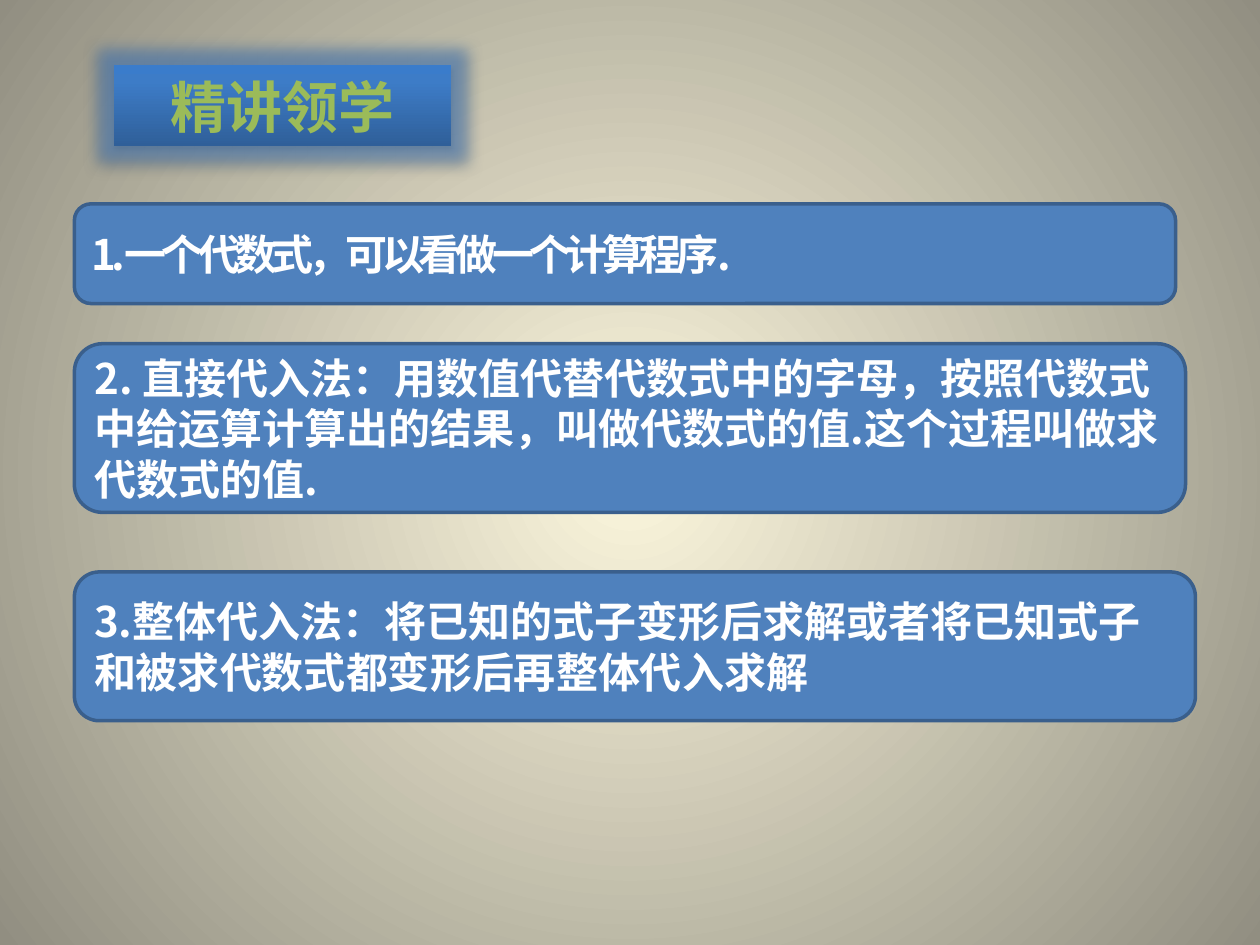
from lxml.etree import SubElement
from pptx import Presentation
from pptx.dml.color import RGBColor
from pptx.enum.shapes import MSO_SHAPE
from pptx.enum.text import MSO_ANCHOR, MSO_AUTO_SIZE, PP_ALIGN
from pptx.oxml.ns import qn
from pptx.util import Cm, Pt

THEME = {
    "font": "Noto Sans CJK SC",
    "head": 32, "body": 24,
    "green": "9BBB59", "white": "FFFFFF", "rim": "FEFEFE",
    "blue": "4F81BD", "edge": "3A5F8C", "black": "000000",
    "back": [(0, "FCF7DD"), (100, "918E81")],
    "bar": [(0, "2F5F99"), (80, "3D7CC7"), (100, "3A7CCB")],
}

HEAD = "精讲领学"
# text, top, width, height (cm), letter spacing (pt)
CARDS = [
    ("1.一个代数式，可以看做一个计算程序.", 4.11, 22.2, 2.01, -3),
    ("2. 直接代入法：用数值代替代数式中的字母，按照代数式中给运算计算出的结果，"
     "叫做代数式的值.这个过程叫做求代数式的值.", 6.93, 22.4, 3.4, 0),
    ("3.整体代入法：将已知的式子变形后求解或者将已知式子和被求代数式都变形后再整体代入求解",
     11.53, 22.6, 3.0, 0),
]
LEFT = 1.5


def add(node, tag, **attrs):
    return SubElement(node, qn(tag), {k: str(v) for k, v in attrs.items()})


def tint(node, color, alpha=100):
    clr = add(node, "a:srgbClr", val=color)
    if alpha < 100:
        add(clr, "a:alpha", val=alpha * 1000)


def blend(fill, owner, stops, angle=None):
    """Gradient fill with any number of stops; round when no angle is given."""
    fill.gradient()
    grad = owner.find(".//" + qn("a:gradFill"))
    for child in list(grad):
        grad.remove(child)
    row = add(grad, "a:gsLst")
    for pos, color in stops:
        tint(add(row, "a:gs", pos=pos * 1000), color)
    if angle is None:
        ring = add(grad, "a:path", path="circle")
        add(ring, "a:fillToRect", l=50000, t=50000, r=50000, b=50000)
    else:
        add(grad, "a:lin", ang=angle * 60000, scaled=0)


def write(shape, text, size, color, align, gap=0):
    frame = shape.text_frame
    frame.text = text
    frame.word_wrap = True
    frame.auto_size = MSO_AUTO_SIZE.NONE
    frame.vertical_anchor = MSO_ANCHOR.MIDDLE
    para = frame.paragraphs[0]
    para.alignment = align
    font = para.font
    font.name, font.size, font.bold = THEME["font"], Pt(size), True
    font.color.rgb = RGBColor.from_string(color)
    props = para._p.pPr.find(qn("a:defRPr"))
    add(props, "a:ea", typeface=THEME["font"])
    if gap:
        props.set("spc", str(gap * 100))
    return props


def place(shape, left, top, width, height):
    shape.left, shape.top = Cm(left), Cm(top)
    shape.width, shape.height = Cm(width), Cm(height)


def add_head(slide):
    head = slide.shapes.title
    place(head, 2.3, 1.32, 6.8, 1.63)
    blend(head.fill, head.element, THEME["bar"], 270)
    head.shadow.inherit = False
    glow = head.element.spPr.find(qn("a:effectLst"))
    tint(add(glow, "a:glow", rad=Pt(18)), THEME["blue"], 60)
    shade = add(glow, "a:outerShdw", blurRad=Pt(3.1), dist=Pt(1.8),
                dir=90 * 60000, rotWithShape=0)
    tint(shade, THEME["black"], 35)
    props = write(head, HEAD, THEME["head"], THEME["green"], PP_ALIGN.CENTER)
    line = props.makeelement(qn("a:ln"), {"w": str(Pt(1.5))})
    tint(add(line, "a:solidFill"), THEME["rim"])
    props.insert(0, line)


def add_card(slide, text, top, width, height, gap):
    card = slide.shapes.add_shape(MSO_SHAPE.ROUNDED_RECTANGLE, Cm(LEFT),
                                  Cm(top), Cm(width), Cm(height))
    card.shadow.inherit = False
    card.fill.solid()
    card.fill.fore_color.rgb = RGBColor.from_string(THEME["blue"])
    card.line.color.rgb = RGBColor.from_string(THEME["edge"])
    card.line.width = Pt(2)
    write(card, text, THEME["body"], THEME["white"], PP_ALIGN.LEFT, gap)


def main():
    deck = Presentation()
    deck.slide_width, deck.slide_height = Cm(25.4), Cm(19.05)
    slide = deck.slides.add_slide(deck.slide_layouts[5])
    blend(slide.background.fill, slide.element, THEME["back"])
    add_head(slide)
    for card in CARDS:
        add_card(slide, *card)
    deck.save("out.pptx")


if __name__ == "__main__":
    main()
